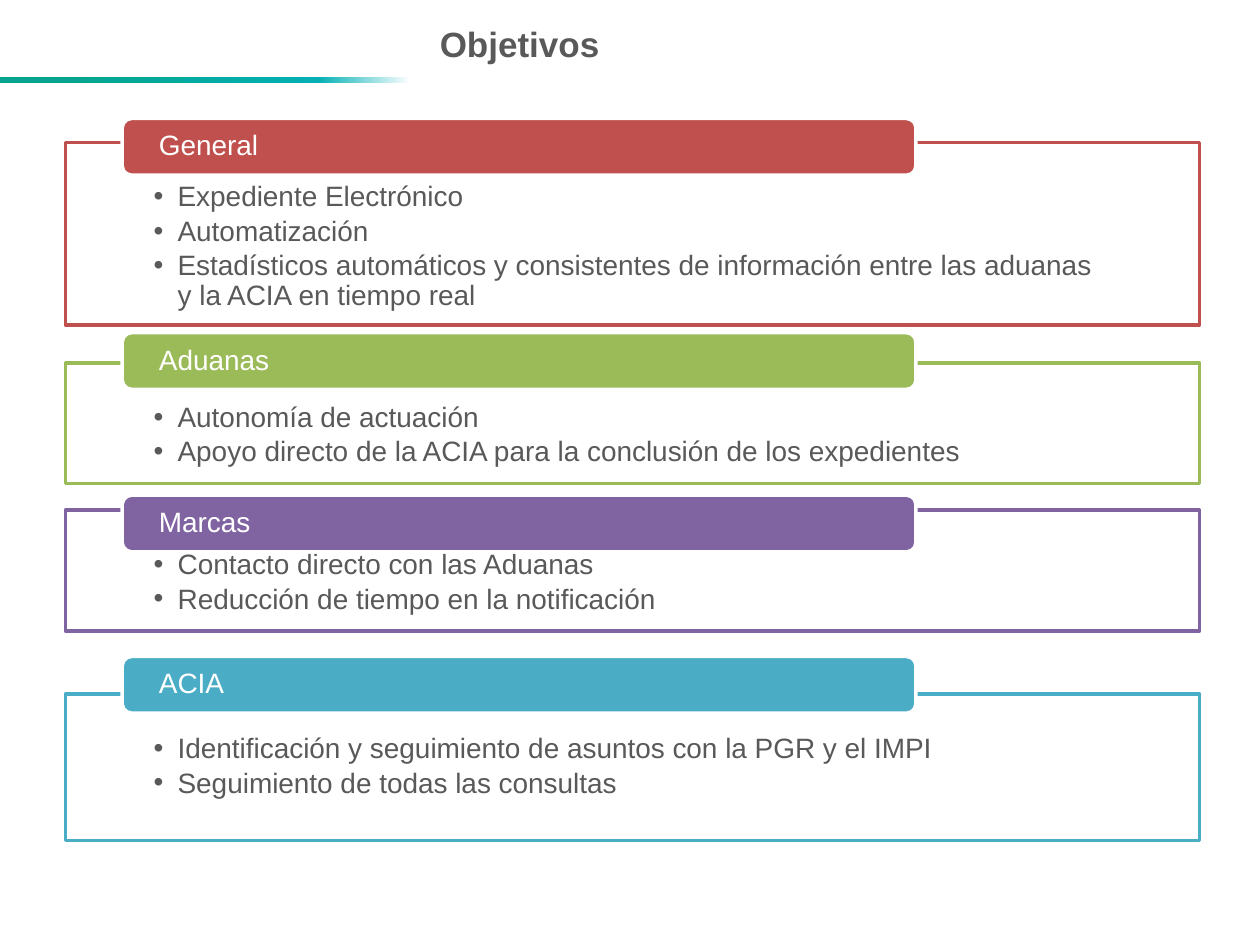
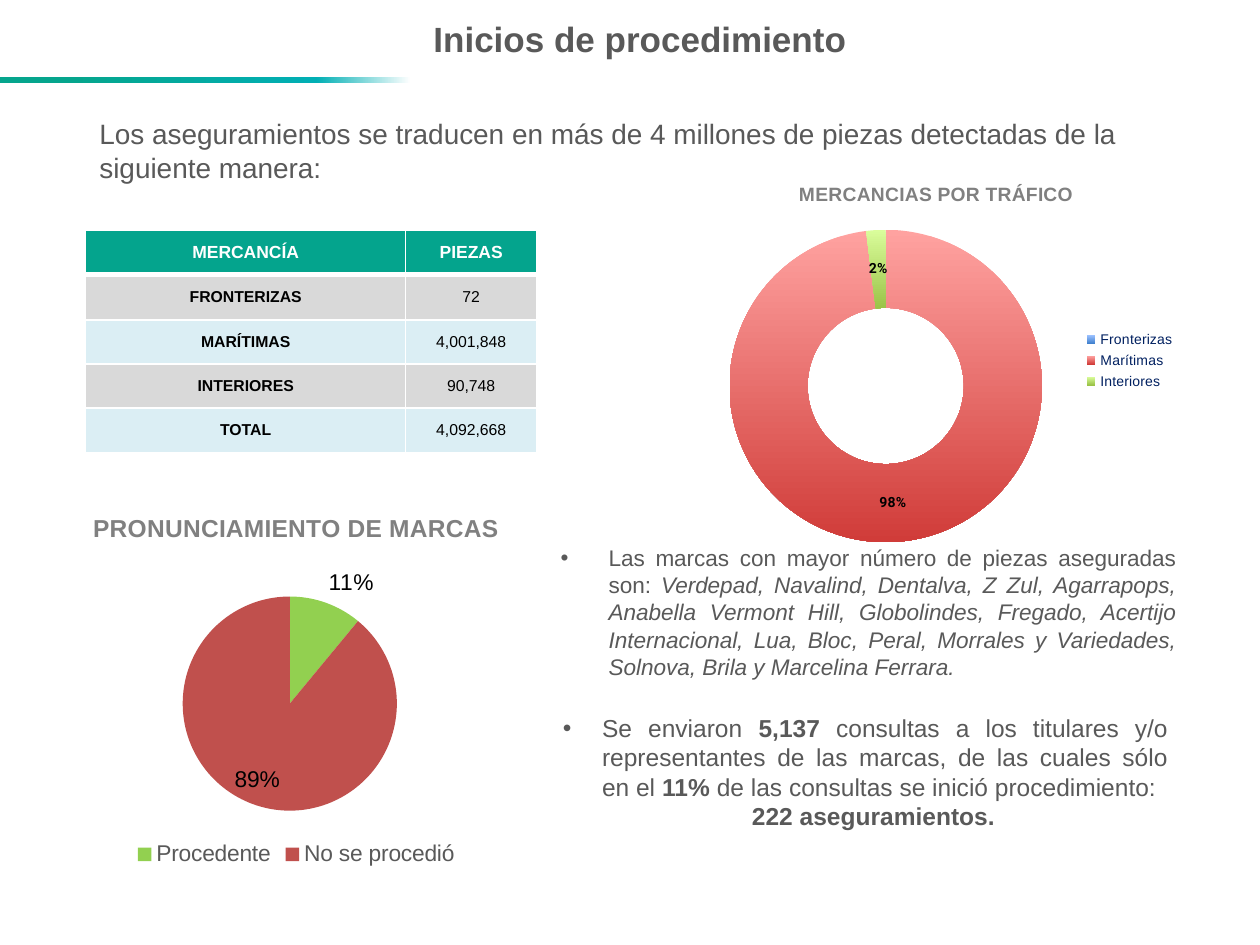
"""Build two slides: system objectives and results of procedure starts."""
from lxml import etree
from pptx import Presentation
from pptx.chart.data import CategoryChartData
from pptx.dml.color import RGBColor
from pptx.enum.chart import XL_CHART_TYPE as ChartType, XL_LABEL_POSITION as LabelPosition
from pptx.enum.chart import XL_LEGEND_POSITION as LegendPosition
from pptx.enum.shapes import MSO_SHAPE as Shape
from pptx.enum.text import MSO_ANCHOR as Anchor, MSO_AUTO_SIZE as AutoSize, PP_ALIGN as Align
from pptx.oxml import parse_xml
from pptx.oxml.ns import nsdecls, qn
from pptx.util import Inches, Pt

GRAY, TITLE_GRAY, WHITE, BLACK, NAVY = "595959", "808080", "FFFFFF", "000000", "002060"
RED, GREEN, PURPLE, BLUE = "C0504D", "9BBB59", "8064A2", "4BACC6"
rgb = RGBColor.from_string


def style(font, size, color, bold=False, italic=False, name="Arial"):
    """Set the whole look of a font."""
    font.name, font.size, font.bold, font.italic = name, Pt(size), bold, italic
    font.color.rgb = rgb(color)


def add_bullet(paragraph, hanging):
    """Give a paragraph a round bullet with a hanging indent."""
    properties = paragraph._p.get_or_add_pPr()
    properties.set("marL", str(Inches(hanging)))
    properties.set("indent", str(-Inches(hanging)))
    etree.SubElement(properties, qn("a:buFont")).set("typeface", "Arial")
    etree.SubElement(properties, qn("a:buChar")).set("char", "•")


presentation = Presentation()
presentation.slide_width, presentation.slide_height = Inches(10), Inches(7.5)
layout = presentation.slide_layouts[5]
slides = []
for title_text, left, top, width, height in [
    ("Objetivos", 3.39, 0.13, 6.44, 0.69),
    ("Inicios de procedimiento", 3.34, 0.09, 6.63, 0.52),
]:
    slide = presentation.slides.add_slide(layout)
    title = slide.shapes.title
    title.left, title.top, title.width, title.height = map(Inches, (left, top, width, height))
    title.text_frame.text = title_text
    title.text_frame.auto_size = AutoSize.NONE
    title.text_frame.vertical_anchor = Anchor.TOP
    paragraph = title.text_frame.paragraphs[0]
    paragraph.alignment = Align.LEFT
    style(paragraph.runs[0].font, 20, GRAY, bold=True)
    slides.append(slide)
objectives, procedures = slides

band = objectives.shapes.add_shape(Shape.RECTANGLE, 0, Inches(0.61), Inches(9.31), Inches(0.05))
band.shadow.inherit = False
band.line.fill.background()
band.fill.gradient()
band.fill.gradient_angle = 0
stop_list = band.element.find(".//" + qn("a:gsLst"))
for stop in list(stop_list):
    stop_list.remove(stop)
for percent, color in [(6, "05A58D"), (27, "01AFB4"), (35, WHITE)]:
    stop = etree.SubElement(stop_list, qn("a:gs"), pos=str(percent * 1000))
    etree.SubElement(stop, qn("a:srgbClr"), val=color)
layout.shapes.element.append(band.element)

for heading, color, heading_top, box_top, box_height, goals in [
    ("General", RED, 0.94, 1.13, 1.45, [
        "Expediente Electrónico",
        "Automatización",
        "Estadísticos automáticos y consistentes de información entre las aduanas "
        "y la ACIA en tiempo real"]),
    ("Aduanas", GREEN, 2.64, 2.88, 0.96, [
        "Autonomía de actuación",
        "Apoyo directo de la ACIA para la conclusión de los expedientes"]),
    ("Marcas", PURPLE, 3.93, 4.05, 0.96, [
        "Contacto directo con las Aduanas",
        "Reducción de tiempo en la notificación"]),
    ("ACIA", BLUE, 5.21, 5.51, 1.16, [
        "Identificación y seguimiento de asuntos con la PGR y el IMPI",
        "Seguimiento de todas las consultas"]),
]:
    box = objectives.shapes.add_shape(
        Shape.RECTANGLE, Inches(0.52), Inches(box_top), Inches(9), Inches(box_height))
    tab = objectives.shapes.add_shape(
        Shape.ROUNDED_RECTANGLE, Inches(0.97), Inches(heading_top), Inches(6.3), Inches(0.45))
    for shape, fill, line, text_color, lines, margins, anchor in [
        (box, WHITE, color, GRAY, goals, (0.7, 0.32, 0.7, 0.12), Anchor.TOP),
        (tab, color, WHITE, WHITE, [heading], (0.27, 0, 0.27, 0), Anchor.MIDDLE),
    ]:
        shape.shadow.inherit = False
        shape.fill.solid()
        shape.fill.fore_color.rgb = rgb(fill)
        shape.line.color.rgb = rgb(line)
        shape.line.width = Pt(2)
        frame = shape.text_frame
        frame.word_wrap = True
        frame.vertical_anchor = anchor
        (frame.margin_left, frame.margin_top,
         frame.margin_right, frame.margin_bottom) = map(Inches, margins)
        frame.text = "\n".join(lines)
        for paragraph in frame.paragraphs:
            paragraph.alignment = Align.LEFT
            paragraph.line_spacing = 0.9
            if shape is box:
                paragraph.space_after = Pt(2.4)
                add_bullet(paragraph, 0.19)
            style(paragraph.runs[0].font, 16, text_color)

intro = procedures.shapes.add_textbox(Inches(0.69), Inches(0.88), Inches(8.62), Inches(5.77))
intro.text_frame.word_wrap = True
intro.text_frame.text = ("Los aseguramientos se traducen en más de 4 millones de piezas "
                         "detectadas de la siguiente manera:")
style(intro.text_frame.paragraphs[0].runs[0].font, 16, GRAY)

goods = [("MERCANCÍA", "PIEZAS"), ("FRONTERIZAS", "72"), ("MARÍTIMAS", "4,001,848"),
         ("INTERIORES", "90,748"), ("TOTAL", "4,092,668")]
table = procedures.shapes.add_table(
    len(goods), 2, Inches(0.68), Inches(1.83), Inches(3.58), Inches(1.75)).table
table.columns[0].width, table.columns[1].width = Inches(2.54), Inches(1.04)
for row, values in enumerate(goods):
    table.rows[row].height = Inches(0.36 if row == 1 else 0.35)
    for column, value in enumerate(values):
        cell = table.cell(row, column)
        cell.margin_left = cell.margin_right = cell.margin_top = cell.margin_bottom = 0
        cell.vertical_anchor = Anchor.MIDDLE
        for side in ("lnL", "lnR", "lnT", "lnB"):
            thick = (row, side) in [(0, "lnB"), (1, "lnT")]
            cell._tc.get_or_add_tcPr().append(parse_xml(
                f'<a:{side} {nsdecls("a")} w="{Pt(3 if thick else 1)}"><a:solidFill>'
                f'<a:srgbClr val="{WHITE}"/></a:solidFill></a:{side}>'))
        cell.fill.solid()
        cell.fill.fore_color.rgb = rgb("04A48D" if row == 0 else "D9D9D9" if row % 2 else "DBEEF4")
        cell.text_frame.text = value
        paragraph = cell.text_frame.paragraphs[0]
        paragraph.alignment = Align.CENTER
        style(paragraph.runs[0].font, 9 if row else 10, BLACK if row else WHITE,
              bold=row == 0 or column == 0)

charts = []
for (chart_type, frame, title_text, title_size, shares, size, legend_place, legend_color,
     label_bold, label_font, plot_place) in [
    (ChartType.PIE, (-0.15, 3.92, 5, 3), "PRONUNCIAMIENTO DE MARCAS", 14,
     {"Procedente": 11, "No se procedió": 89}, 13, LegendPosition.BOTTOM, GRAY,
     False, "Arial", (0.32, 0.27, 0.34, 0.57)),
    (ChartType.DOUGHNUT, (5.43, 1.29, 4, 3.14), "MERCANCIAS POR TRÁFICO", 11,
     {"Fronterizas": 0, "Marítimas": 98, "Interiores": 2}, 8, LegendPosition.RIGHT, NAVY,
     True, "Roboto", (0.09, 0.17, 0.62, 0.79)),
]:
    data = CategoryChartData()
    data.categories = list(shares)
    data.add_series("Series 1", list(shares.values()))
    chart = procedures.shapes.add_chart(chart_type, *map(Inches, frame), data).chart
    style(chart.font, size, BLACK)
    chart.has_title = True
    chart.chart_title.text_frame.text = title_text
    style(chart.chart_title.text_frame.paragraphs[0].runs[0].font, title_size, TITLE_GRAY, bold=True)
    chart.has_legend = True
    chart.legend.position = legend_place
    chart.legend.include_in_layout = False
    style(chart.legend.font, size, legend_color)
    labels = chart.plots[0].series[0].data_labels
    labels.show_value = False
    labels.show_percentage = True
    labels.number_format, labels.number_format_is_linked = "0%", False
    style(labels.font, size, BLACK, bold=label_bold, name=label_font)
    if chart_type == ChartType.PIE:
        labels.position = LabelPosition.BEST_FIT
    plot_area = chart.element.find(".//" + qn("c:plotArea"))
    for old_layout in plot_area.findall(qn("c:layout")):
        plot_area.remove(old_layout)
    x, y, w, h = plot_place
    plot_area.insert(0, parse_xml(
        f'<c:layout {nsdecls("c")}><c:manualLayout><c:layoutTarget val="inner"/>'
        f'<c:xMode val="edge"/><c:yMode val="edge"/><c:x val="{x}"/><c:y val="{y}"/>'
        f'<c:w val="{w}"/><c:h val="{h}"/></c:manualLayout></c:layout>'))
    charts.append(chart)
rulings, traffic = [chart.plots[0].series[0] for chart in charts]

for index, color in enumerate(["92D050", RED]):
    fill = rulings.points[index].format.fill
    fill.solid()
    fill.fore_color.rgb = rgb(color)

for index, colors in enumerate([("9BC1FF", "3F80CD"), ("FFA2A0", "D03C39"), ("DAFD9B", "9BC348")]):
    fill = traffic.points[index].format.fill
    fill.gradient()
    fill.gradient_angle = 270
    for stop, color in zip(fill.gradient_stops, colors):
        stop.color.rgb = rgb(color)

border_label = traffic.points[0].data_label.text_frame
border_label.text = "<1%"
style(border_label.paragraphs[0].runs[0].font, 8, BLACK, name="Roboto")
label_index = traffic.data_labels._element.find(qn("c:dLbl")).find(qn("c:idx"))
label_index.addnext(parse_xml(
    f'<c:layout {nsdecls("c")}><c:manualLayout><c:x val="0.12"/><c:y val="-0.11"/>'
    '</c:manualLayout></c:layout>'))

brands_box = procedures.shapes.add_textbox(Inches(4.45), Inches(4.27), Inches(4.98), Inches(1.35))
queries_box = procedures.shapes.add_textbox(Inches(4.37), Inches(5.61), Inches(5), Inches(1.04))
brands_box.text_frame.margin_left = 0
for box, size, hanging, runs in [
    (brands_box, 12.9, 0.38, [
        ("Las marcas con mayor número de piezas aseguradas son: ", False, False),
        ("Verdepad, Navalind, Dentalva, Z Zul, Agarrapops, Anabella Vermont Hill, Globolindes, "
         "Fregado, Acertijo Internacional, Lua, Bloc, Peral, Morrales y Variedades, "
         "Solnova, Brila y Marcelina Ferrara.", False, True)]),
    (queries_box, 14, 0.31, [
        ("Se enviaron ", False, False),
        ("5,137 ", True, False),
        ("consultas a los titulares y/o representantes de las marcas, de las cuales sólo en el ",
         False, False),
        ("11% ", True, False),
        ("de las consultas se inició procedimiento:", False, False)]),
]:
    box.text_frame.word_wrap = True
    paragraph = box.text_frame.paragraphs[0]
    paragraph.alignment = Align.JUSTIFY
    add_bullet(paragraph, hanging)
    for text, bold, italic in runs:
        run = paragraph.add_run()
        run.text = text
        style(run.font, size, GRAY, bold, italic)

seizures = queries_box.text_frame.add_paragraph()
seizures.text = "222 aseguramientos."
seizures._p.get_or_add_pPr().set("marL", str(Inches(1.5)))
style(seizures.runs[0].font, 14, GRAY, bold=True)

presentation.save("out.pptx")
